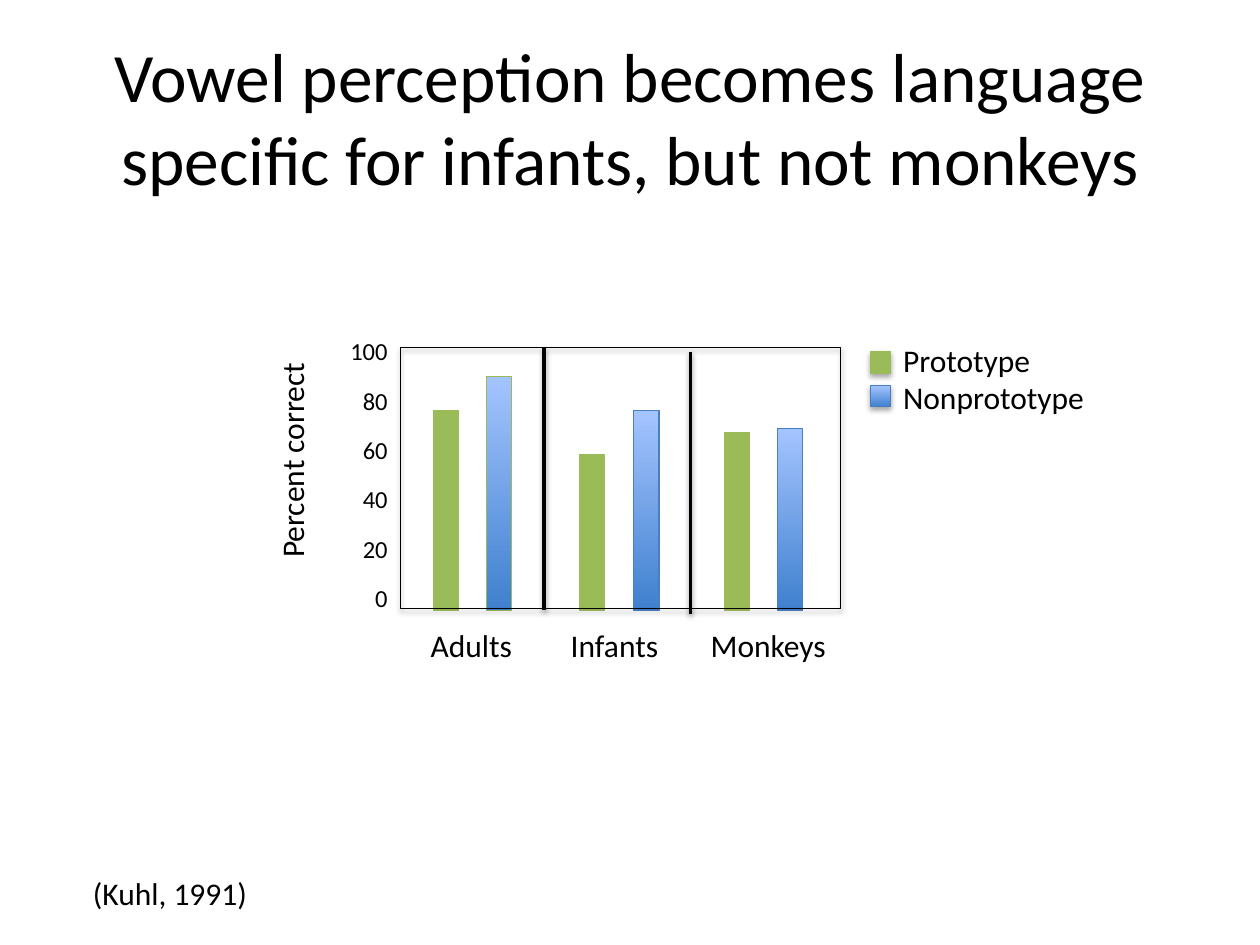
from dataclasses import dataclass

from lxml import etree
from pptx import Presentation
from pptx.dml.color import RGBColor
from pptx.enum.shapes import MSO_CONNECTOR, MSO_SHAPE
from pptx.enum.text import MSO_ANCHOR, PP_ALIGN
from pptx.oxml.ns import qn
from pptx.slide import Slide
from pptx.util import Pt

RECTANGLE = MSO_SHAPE.RECTANGLE
STRAIGHT = MSO_CONNECTOR.STRAIGHT
LEFT, CENTER, RIGHT = PP_ALIGN.LEFT, PP_ALIGN.CENTER, PP_ALIGN.RIGHT
MIDDLE = MSO_ANCHOR.MIDDLE

GREEN = "9BBB59"
BLUE_EDGE = "4B7EBC"
BLUE_GRADIENT = ("3F80CE", "A4C4FF")
BAR_WIDTH = 14.4
BASELINE = 349


def rgb(color):
    return RGBColor.from_string(color)


@dataclass
class SlideBuilder:
    slide: Slide
    font: str = "Calibri"
    ink: str = "000000"

    def format_text(self, frame, text, size, align):
        frame.text = text
        paragraph = frame.paragraphs[0]
        paragraph.alignment = align
        paragraph.font.name = self.font
        paragraph.font.size = Pt(size)
        paragraph.font.color.rgb = rgb(self.ink)

    def title(self, text, left, top, width, height, size):
        shape = self.slide.shapes.title
        shape.left, shape.top = Pt(left), Pt(top)
        shape.width, shape.height = Pt(width), Pt(height)
        shape.text_frame.vertical_anchor = MIDDLE
        self.format_text(shape.text_frame, text, size, CENTER)

    def text(self, text, left, top, width, height=29, size=18, align=LEFT, rotation=0):
        shape = self.slide.shapes.add_textbox(Pt(left), Pt(top), Pt(width), Pt(height))
        shape.rotation = rotation
        shape.text_frame.word_wrap = False
        self.format_text(shape.text_frame, text, size, align)

    def shadow(self, effects, opacity, distance):
        outer = etree.SubElement(effects, qn("a:outerShdw"), blurRad=str(Pt(3.1)),
                                 dist=str(Pt(distance)), dir="5400000", rotWithShape="0")
        color = etree.SubElement(outer, qn("a:srgbClr"), val=self.ink)
        etree.SubElement(color, qn("a:alpha"), val=str(opacity * 1000))

    def rectangle(self, left, top, width, height, fill, edge, shadowed=False):
        shape = self.slide.shapes.add_shape(RECTANGLE, Pt(left), Pt(top), Pt(width), Pt(height))
        if fill is None:
            shape.fill.background()
        elif isinstance(fill, tuple):
            shape.fill.gradient()
            shape.fill.gradient_angle = 90
            for stop, color, position in zip(shape.fill.gradient_stops, fill, (0, 1)):
                stop.color.rgb = rgb(color)
                stop.position = position
        else:
            shape.fill.solid()
            shape.fill.fore_color.rgb = rgb(fill)
        shape.line.color.rgb = rgb(edge)
        shape.line.width = Pt(0.75)
        shape.shadow.inherit = False
        if shadowed:
            self.shadow(shape._element.spPr.find(qn("a:effectLst")), 35, 1.8)

    def divider(self, x, top, bottom):
        line = self.slide.shapes.add_connector(STRAIGHT, Pt(x), Pt(top), Pt(x), Pt(bottom))
        line.line.color.rgb = rgb(self.ink)
        line.line.width = Pt(2)
        effects = etree.SubElement(line._element.spPr, qn("a:effectLst"))
        self.shadow(effects, 38, 1.6)


def main():
    presentation = Presentation()
    presentation.slide_width, presentation.slide_height = Pt(720), Pt(540)
    builder = SlideBuilder(presentation.slides.add_slide(presentation.slide_layouts[5]))

    builder.title("Vowel perception becomes language specific for infants, but not monkeys",
                  36, 21.6, 648, 90, 39.6)
    builder.text("(Kuhl, 1991)", 46, 496, 104)

    bars = [
        (247.7, 234.7, GREEN, GREEN),
        (277.9, 215.3, BLUE_GRADIENT, GREEN),
        (331.2, 260, GREEN, GREEN),
        (362.2, 234.7, BLUE_GRADIENT, BLUE_EDGE),
        (414, 247, GREEN, GREEN),
        (444.2, 244.8, BLUE_GRADIENT, BLUE_EDGE),
    ]
    for left, top, fill, edge in bars:
        builder.rectangle(left, top, BAR_WIDTH, BASELINE - top, fill, edge)

    for group, left, width in [("Adults", 239, 61), ("Infants", 319, 65), ("Monkeys", 399, 81)]:
        builder.text(group, left, 354, width)

    for step, value in enumerate(range(100, -1, -20)):
        label = str(value)
        width = 14.4 + 7.1 * len(label)
        builder.text(label, 228.6 - width, 188.6 + 28.2 * step, width, 24.5, 14, RIGHT)
    builder.text("Percent correct", 103, 247.7, 127.4, rotation=270)

    builder.rectangle(229, 198.7, 251.3, 149, None, builder.ink, shadowed=True)
    builder.divider(311, 198.7, 348.5)
    builder.divider(394.6, 201, 350.6)

    legend = [
        ("Prototype", 201, 191.5, 88, GREEN, GREEN),
        ("Nonprototype", 220.3, 212.4, 119, BLUE_GRADIENT, BLUE_EDGE),
    ]
    for name, key_top, text_top, width, fill, edge in legend:
        builder.rectangle(497.5, key_top, 11.5, 12.2, fill, edge, shadowed=True)
        builder.text(name, 509, text_top, width)

    presentation.save("out.pptx")


if __name__ == "__main__":
    main()
